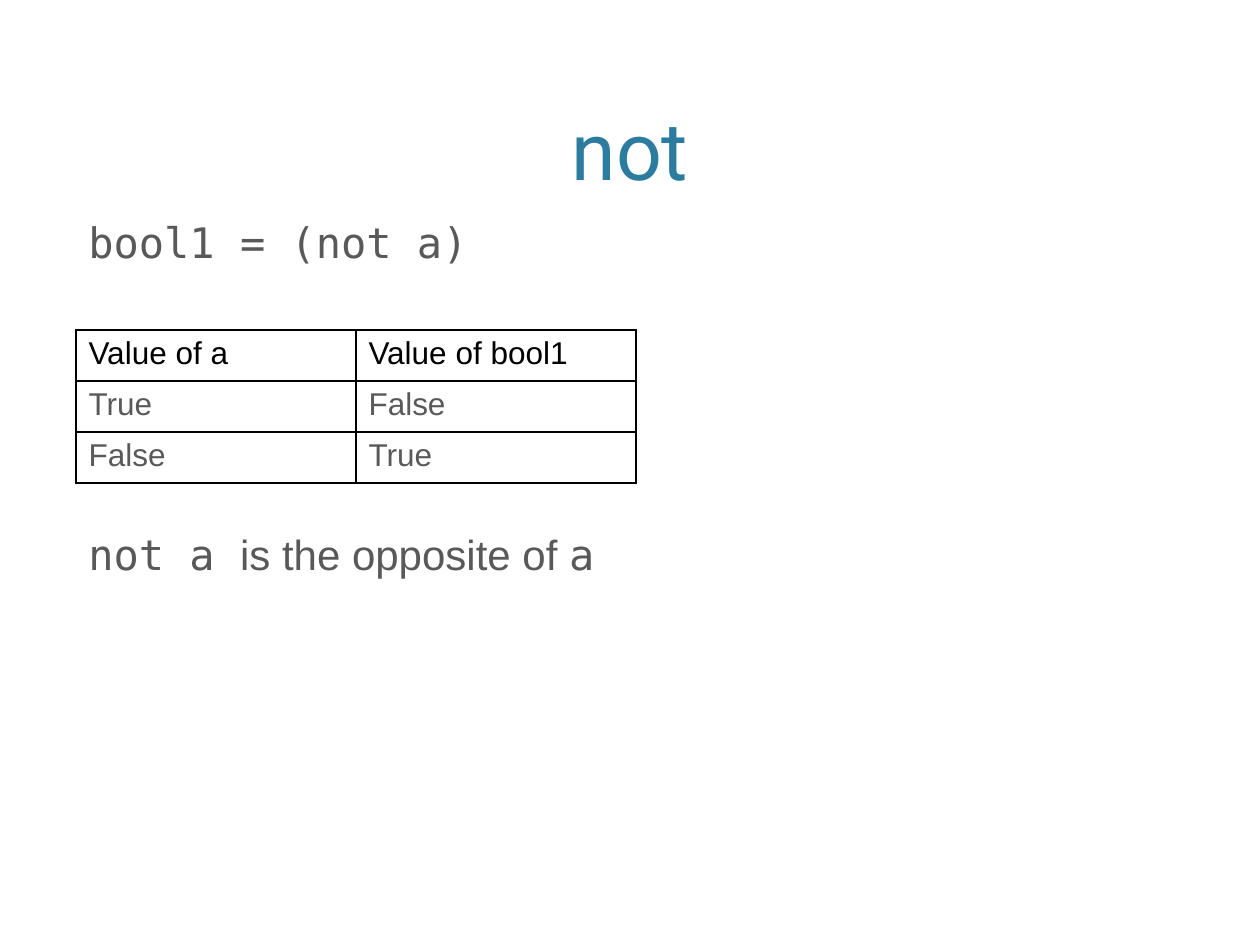
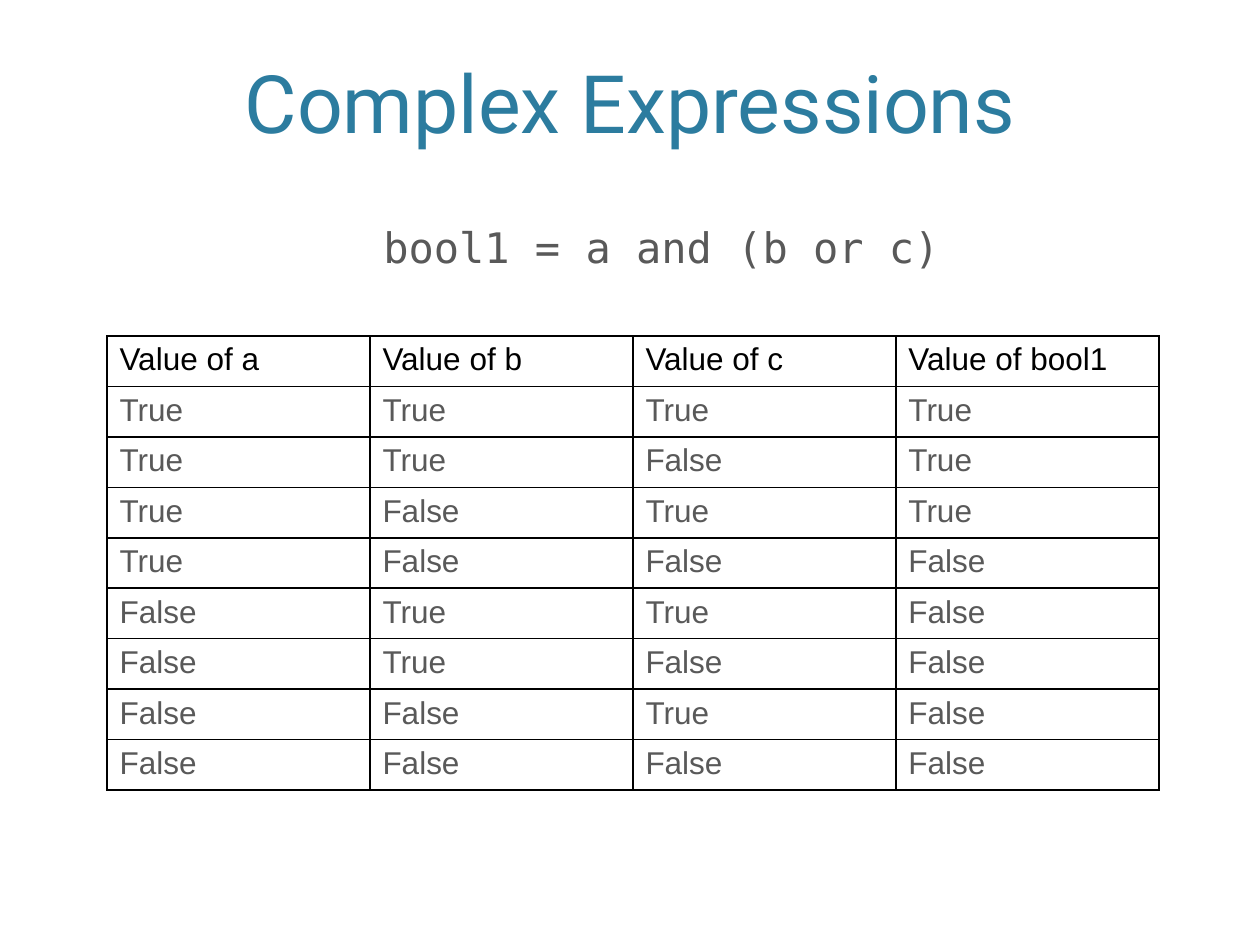
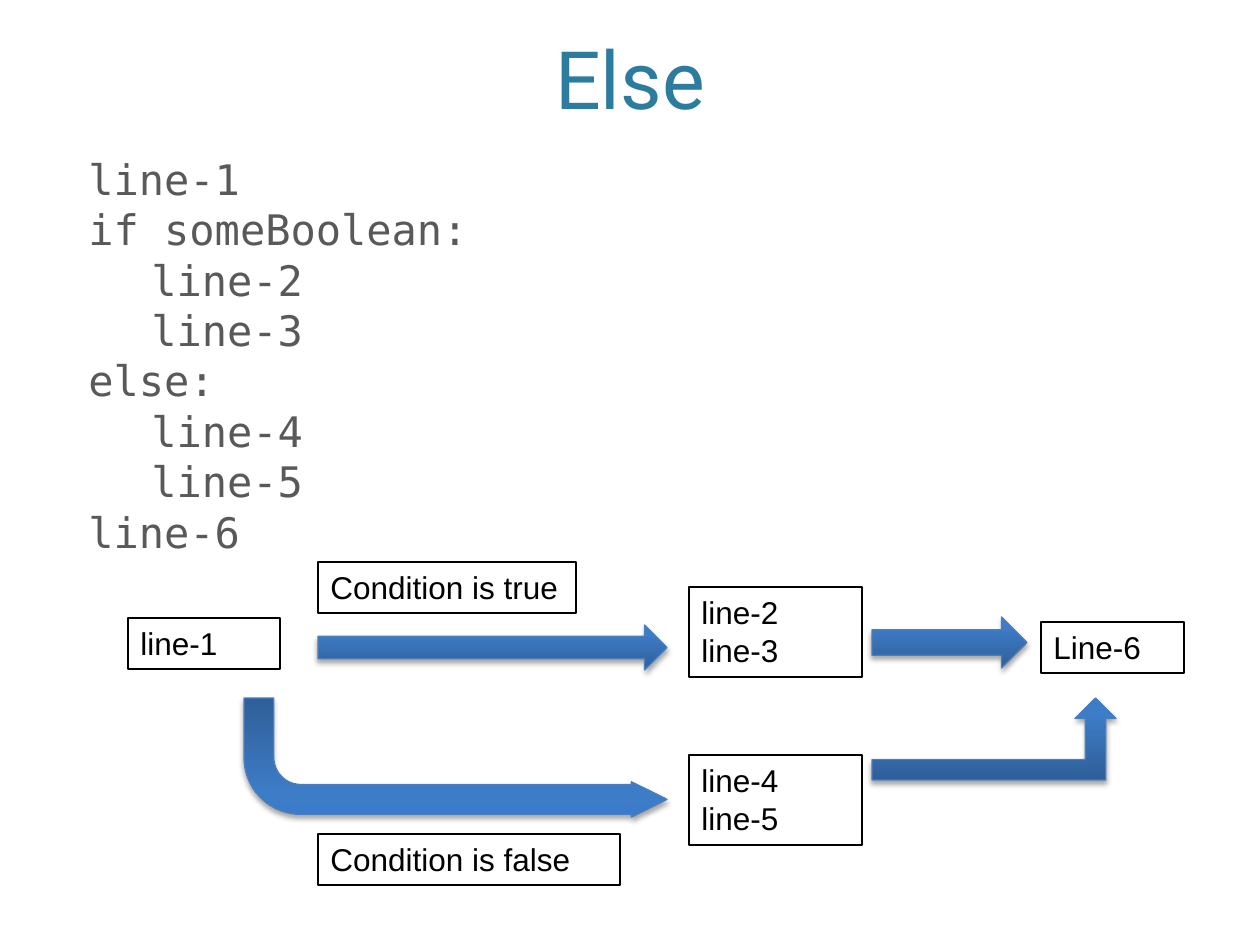
"""Build three slides on boolean operators and the else branch."""
import itertools

import lxml.etree
import pptx
import pptx.dml.color
import pptx.enum.shapes
import pptx.enum.text
import pptx.oxml
import pptx.oxml.ns
import pptx.util

SCALE = 914400 / 126
SLIDE_SIZE = (1260, 945)
MARGIN, CONTENT_WIDTH = 76, 1108
TAB_STOP = 63

TITLE_FONT, BODY_FONT, CODE_FONT = "Roboto", "Arial", "DejaVu Sans Mono"
TITLE_SIZE, BODY_SIZE, SMALL_SIZE = 46, 24, 18
TITLE_COLOR, BODY_COLOR, BLACK = "2C7C9F", "595959", "000000"
ARROW_LINE = "4B7EBC"
ARROW_STOPS = [(0, "2F5F99"), (80, "3D7CC7"), (100, "3A7CCB")]

NOT_SLIDE = {
    "title": ("not", 19, 184),
    "code": "bool1 = (not a)",
    "headers": ["Value of a", "Value of bool1"],
    "rows": [(a, not a) for a in (True, False)],
    "summary": [("not a ", CODE_FONT), ("is the opposite of ", BODY_FONT), ("a", CODE_FONT)],
}
COMPLEX_SLIDE = {
    "title": ("Complex Expressions", -28, 184),
    "code": "bool1 = a and (b or c)",
    "headers": ["Value of a", "Value of b", "Value of c", "Value of bool1"],
    "rows": [(a, b, c, a and (b or c)) for a, b, c in itertools.product((True, False), repeat=3)],
}
ELSE_SLIDE = {
    "title": ("Else", 15, 117),
    "code": ["line-1", "if someBoolean:", "\tline-2", "\tline-3", "else:", "\tline-4", "\tline-5", "line-6"],
    "boxes": [
        (["line-1"], 128, 618, 152, 51),
        (["Condition is true"], 318, 562, 258, 51),
        (["line-2", "line-3"], 689, 587, 173, 90),
        (["Condition is false"], 318, 834, 302, 51),
        (["line-4", "line-5"], 689, 755, 173, 90),
        (["Line-6"], 1041, 622, 143, 51),
    ],
    "arrows": [
        ("RIGHT_ARROW", (318, 625, 349, 45), []),
        ("BENT_ARROW", (244, 698, 423, 119), [0.25, 0.148, 0.299, 0.477]),
        ("RIGHT_ARROW", (872, 617, 155, 51), []),
        ("BENT_UP_ARROW", (872, 698, 244, 82), []),
    ],
}


def px(length):
    return pptx.util.Emu(round(length * SCALE))


def color(value):
    return pptx.dml.color.RGBColor.from_string(value)


def add_element(parent, tag, **attributes):
    element = lxml.etree.SubElement(parent, pptx.oxml.ns.qn(tag))
    for name, value in attributes.items():
        element.set(name, str(value))
    return element


def style_font(font, name, size, font_color):
    font.name = name
    font.size = pptx.util.Pt(size)
    font.color.rgb = color(font_color)


def fill_text(text_frame, lines, name, size, font_color, align="LEFT", spacing=None):
    text_frame.word_wrap = True
    text_frame.text = "\n".join(lines)
    for paragraph in text_frame.paragraphs:
        paragraph.alignment = getattr(pptx.enum.text.PP_ALIGN, align)
        paragraph.line_spacing = spacing
        if paragraph.text.startswith("\t"):
            tabs = add_element(paragraph._p.get_or_add_pPr(), "a:tabLst")
            add_element(tabs, "a:tab", pos=px(TAB_STOP), algn="l")
        for run in paragraph.runs:
            style_font(run.font, name, size, font_color)


def add_text(slide, box, lines, name, size, font_color, **options):
    shape = slide.shapes.add_textbox(*map(px, box))
    fill_text(shape.text_frame, lines, name, size, font_color, **options)
    return shape


def add_title(slide, text, top, height):
    shape = add_text(slide, (MARGIN, top, CONTENT_WIDTH, height), [text],
                     TITLE_FONT, TITLE_SIZE, TITLE_COLOR, align="CENTER")
    shape.text_frame.vertical_anchor = pptx.enum.text.MSO_ANCHOR.BOTTOM


def add_code(slide, top, height, lines, **options):
    return add_text(slide, (MARGIN, top, CONTENT_WIDTH, height), lines,
                    CODE_FONT, BODY_SIZE, BODY_COLOR, **options)


def add_borders(cell):
    properties = cell._tc.get_or_add_tcPr()
    for side in ("a:lnL", "a:lnR", "a:lnT", "a:lnB"):
        line = add_element(properties, side, w=pptx.util.Pt(1))
        add_element(add_element(line, "a:solidFill"), "a:srgbClr", val=BLACK)


def add_truth_table(slide, content, left, top, column_width, row_height):
    rows = [content["headers"]] + content["rows"]
    columns = len(content["headers"])
    box = (left, top, column_width * columns, row_height * len(rows))
    table = slide.shapes.add_table(len(rows), columns, *map(px, box)).table
    table.first_row = table.horz_banding = False
    for column in table.columns:
        column.width = px(column_width)
    for row_index, values in enumerate(rows):
        table.rows[row_index].height = px(row_height)
        for column_index, value in enumerate(values):
            cell = table.cell(row_index, column_index)
            fill_text(cell.text_frame, [str(value)], BODY_FONT, SMALL_SIZE,
                      BODY_COLOR if row_index else BLACK)
            add_borders(cell)
            cell.fill.background()


def add_box(slide, lines, *box):
    shape = slide.shapes.add_shape(pptx.enum.shapes.MSO_SHAPE.RECTANGLE, *map(px, box))
    shape.shadow.inherit = False
    shape.fill.background()
    shape.line.color.rgb = color(BLACK)
    shape.line.width = pptx.util.Pt(0.75)
    shape.text_frame.vertical_anchor = pptx.enum.text.MSO_ANCHOR.TOP
    fill_text(shape.text_frame, lines, BODY_FONT, SMALL_SIZE, BLACK)


def add_arrow(slide, kind, box, adjustments):
    shape = slide.shapes.add_shape(getattr(pptx.enum.shapes.MSO_SHAPE, kind), *map(px, box))
    for index, value in enumerate(adjustments):
        shape.adjustments[index] = value
    if kind == "BENT_ARROW":
        shape._element.spPr.find(pptx.oxml.ns.qn("a:xfrm")).set("flipV", "1")
    shape.line.color.rgb = color(ARROW_LINE)
    shape.line.width = pptx.util.Pt(0.75)
    shape.fill.gradient()
    shape.fill.gradient_angle = 90
    stops = shape._element.spPr.find(".//" + pptx.oxml.ns.qn("a:gsLst"))
    for stop in list(stops):
        stops.remove(stop)
    for position, value in ARROW_STOPS:
        add_element(add_element(stops, "a:gs", pos=position * 1000), "a:srgbClr", val=value)
    shape.shadow.inherit = False
    effects = shape._element.spPr.find(pptx.oxml.ns.qn("a:effectLst"))
    shadow = add_element(effects, "a:outerShdw", blurRad=pptx.util.Pt(3.1), dist=pptx.util.Pt(1.8),
                         dir=5400000, rotWithShape=0)
    add_element(add_element(shadow, "a:srgbClr", val=BLACK), "a:alpha", val=35000)


def build_not(slide):
    add_code(slide, 220, 599, [NOT_SLIDE["code"]], spacing=0.8)
    add_truth_table(slide, NOT_SLIDE, MARGIN, 330, 280, 51)
    summary = add_text(slide, (MARGIN, 522, 869, 63), [""], BODY_FONT, BODY_SIZE, BODY_COLOR)
    for text, font_name in NOT_SLIDE["summary"]:
        run = summary.text_frame.paragraphs[0].add_run()
        run.text = text
        style_font(run.font, font_name, BODY_SIZE, BODY_COLOR)


def build_complex(slide):
    code = add_code(slide, 225, 547, [COMPLEX_SLIDE["code"]], align="CENTER", spacing=0.8)
    code.text_frame.paragraphs[0]._p.get_or_add_pPr().set("marL", str(px(TAB_STOP)))
    add_truth_table(slide, COMPLEX_SLIDE, 107, 336, 263, 50)


def build_else(slide):
    add_code(slide, 147, 672, ELSE_SLIDE["code"])
    for box in ELSE_SLIDE["boxes"]:
        add_box(slide, *box)
    for arrow in ELSE_SLIDE["arrows"]:
        add_arrow(slide, *arrow)


def main():
    presentation = pptx.Presentation()
    presentation.slide_width, presentation.slide_height = map(px, SLIDE_SIZE)
    builders = [(NOT_SLIDE, build_not), (COMPLEX_SLIDE, build_complex), (ELSE_SLIDE, build_else)]
    for content, build in builders:
        slide = presentation.slides.add_slide(presentation.slide_layouts[6])
        add_title(slide, *content["title"])
        build(slide)
    presentation.save("out.pptx")


if __name__ == "__main__":
    main()
